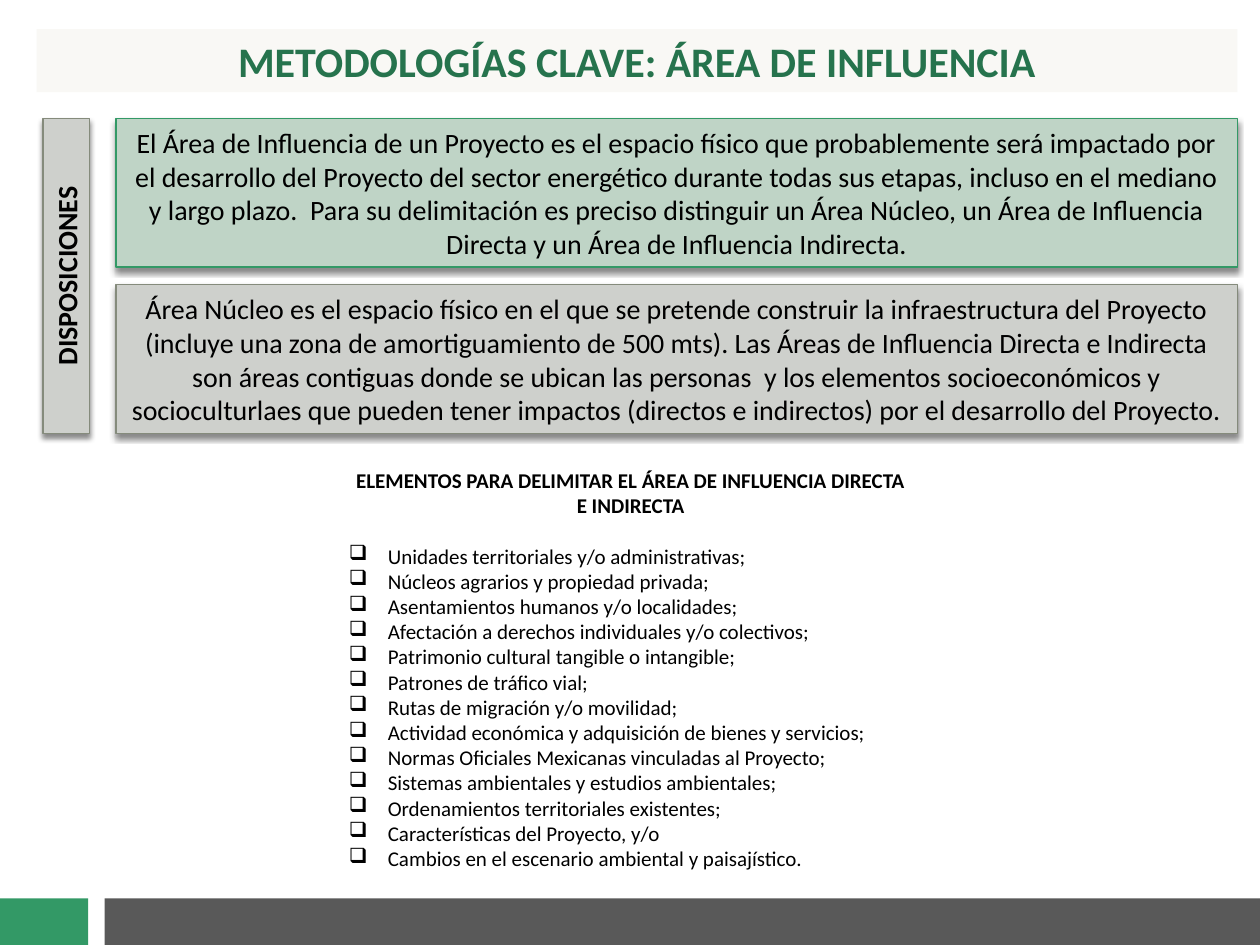
from dataclasses import dataclass

from lxml import etree
from pptx import Presentation
from pptx.dml.color import RGBColor
from pptx.enum.shapes import MSO_SHAPE
from pptx.enum.text import MSO_ANCHOR, PP_ALIGN
from pptx.oxml.ns import qn
from pptx.util import Emu, Inches, Pt

RECTANGLE = MSO_SHAPE.RECTANGLE
CENTER, LEFT = PP_ALIGN.CENTER, PP_ALIGN.LEFT
MIDDLE, TOP = MSO_ANCHOR.MIDDLE, MSO_ANCHOR.TOP

FONT = "Calibri"
BLACK = RGBColor(0x00, 0x00, 0x00)
GREEN = RGBColor(0x33, 0x99, 0x66)
DARK_GREEN = RGBColor(0x26, 0x73, 0x4D)
PALE_GREEN = RGBColor(0xBF, 0xD4, 0xC6)
CREAM = RGBColor(0xF9, 0xF8, 0xF5)
PALE_GRAY = RGBColor(0xCE, 0xD0, 0xCC)
GRAY = RGBColor(0x85, 0x8B, 0x7C)
DARK_GRAY = RGBColor(0x59, 0x59, 0x59)

TITLE = "METODOLOGÍAS CLAVE: ÁREA DE INFLUENCIA"
LABEL = "DISPOSICIONES"
# Text, fill and outline of each provision
PROVISIONS = [
    ("El Área de Influencia de un Proyecto es el espacio físico que probablemente "
     "será impactado por el desarrollo del Proyecto del sector energético durante "
     "todas sus etapas, incluso en el mediano y largo plazo.  Para su delimitación "
     "es preciso distinguir un Área Núcleo, un Área de Influencia Directa y un Área "
     "de Influencia Indirecta.", PALE_GREEN, GREEN),
    ("Área Núcleo es el espacio físico en el que se pretende construir la "
     "infraestructura del Proyecto (incluye una zona de amortiguamiento de 500 mts). "
     "Las Áreas de Influencia Directa e Indirecta son áreas contiguas donde se ubican "
     "las personas  y los elementos socioeconómicos y socioculturlaes que pueden tener "
     "impactos (directos e indirectos) por el desarrollo del Proyecto.",
     PALE_GRAY, GRAY),
]
ELEMENTS_HEADING = "ELEMENTOS PARA DELIMITAR EL ÁREA DE INFLUENCIA DIRECTA E INDIRECTA"
ELEMENTS = [
    "Unidades territoriales y/o administrativas;",
    "Núcleos agrarios y propiedad privada;",
    "Asentamientos humanos y/o localidades;",
    "Afectación a derechos individuales y/o colectivos;",
    "Patrimonio cultural tangible o intangible;",
    "Patrones de tráfico vial;",
    "Rutas de migración y/o movilidad;",
    "Actividad económica y adquisición de bienes y servicios;",
    "Normas Oficiales Mexicanas vinculadas al Proyecto;",
    "Sistemas ambientales y estudios ambientales;",
    "Ordenamientos territoriales existentes;",
    "Características del Proyecto, y/o",
    "Cambios en el escenario ambiental y paisajístico.",
]


@dataclass
class Box:
    left: int
    top: int
    width: int
    height: int

    def inner(self, left, top, width, height):
        """Return an inner box given in percent of this one."""
        return Box(Emu(int(self.left + self.width * left / 100)),
                   Emu(int(self.top + self.height * top / 100)),
                   Emu(int(self.width * width / 100)),
                   Emu(int(self.height * height / 100)))

    def turned(self):
        """Return the box that covers this one after a quarter turn."""
        shift = (self.width - self.height) // 2
        return Box(self.left + shift, self.top - shift, self.height, self.width)

    def bounds(self):
        return self.left, self.top, self.width, self.height


def write(paragraph, text, size, color=BLACK, bold=False, alignment=CENTER):
    paragraph.alignment = alignment
    run = paragraph.add_run()
    run.text = text
    run.font.name = FONT
    run.font.size = Pt(size)
    run.font.bold = bold
    run.font.color.rgb = color


def add_bullet(paragraph, character, indent):
    properties = paragraph._p.get_or_add_pPr()
    properties.set("marL", str(indent))
    properties.set("indent", str(-indent))
    etree.SubElement(properties, qn("a:buChar")).set("char", character)


def add_shadow(shape):
    effects = shape._element.spPr.find(qn("a:effectLst"))
    shadow = etree.SubElement(effects, qn("a:outerShdw"), blurRad=str(Pt(3)),
                              dist=str(Pt(2.4)), dir="5400000", rotWithShape="0")
    color = etree.SubElement(shadow, qn("a:srgbClr"), val=str(BLACK))
    etree.SubElement(color, qn("a:alpha"), val="45000")


def add_rectangle(slide, box, fill, line=None):
    shape = slide.shapes.add_shape(RECTANGLE, *box.bounds())
    shape.shadow.inherit = False
    shape.fill.solid()
    shape.fill.fore_color.rgb = fill
    if line is None:
        shape.line.fill.background()
    else:
        shape.line.color.rgb = line
        shape.line.width = Pt(0.79)
    return shape


def add_panel(slide, box, text, fill, line, bold=False):
    panel = add_rectangle(slide, box, fill, line)
    add_shadow(panel)
    frame = panel.text_frame
    frame.word_wrap = True
    frame.vertical_anchor = MIDDLE
    write(frame.paragraphs[0], text, 16, bold=bold)
    return panel


def place_title(slide, box):
    title = slide.shapes.title
    title.left, title.top, title.width, title.height = box.bounds()
    title.fill.solid()
    title.fill.fore_color.rgb = CREAM
    title.text_frame.vertical_anchor = MIDDLE
    write(title.text_frame.paragraphs[0], TITLE, 24, DARK_GREEN, bold=True)


def place_provisions(slide, box):
    # Vertical label beside the stacked panels
    label_box = box.inner(0, 0, 3.9, 100).turned()
    label = add_panel(slide, label_box, LABEL, PALE_GRAY, GRAY, bold=True)
    label.rotation = 270
    height = 47.2
    step = 100 - height
    for row, (text, fill, line) in enumerate(PROVISIONS):
        add_panel(slide, box.inner(6.12, row * step, 93.88, height), text, fill, line)


def place_elements(slide, box):
    frame = slide.shapes.add_textbox(*box.bounds()).text_frame
    frame.word_wrap = True
    frame.vertical_anchor = TOP
    heading = frame.paragraphs[0]
    write(heading, ELEMENTS_HEADING, 12, bold=True)
    heading.space_after = Pt(14.5)
    for text in ELEMENTS:
        paragraph = frame.add_paragraph()
        add_bullet(paragraph, "❑", Inches(0.31))
        write(paragraph, text, 12, alignment=LEFT)


def place_footer(slide, box):
    add_rectangle(slide, box.inner(8.3, 0, 91.7, 100), DARK_GRAY)
    add_rectangle(slide, box.inner(0, 0, 7, 100), GREEN)


def main():
    presentation = Presentation()
    presentation.slide_width = Inches(10)
    presentation.slide_height = Inches(7.5)
    title_only = presentation.slide_layouts[5]
    slide = presentation.slides.add_slide(title_only)
    page = Box(0, 0, presentation.slide_width, presentation.slide_height)

    place_footer(slide, page.inner(0, 95.07, 100, 4.93))
    place_title(slide, page.inner(2.9, 3.07, 95.3, 6.67))
    place_provisions(slide, page.inner(3.4, 12.53, 94.8, 33.33))
    place_elements(slide, page.inner(26.7, 48.8, 46.7, 44.4))
    presentation.save("out.pptx")


if __name__ == "__main__":
    main()
